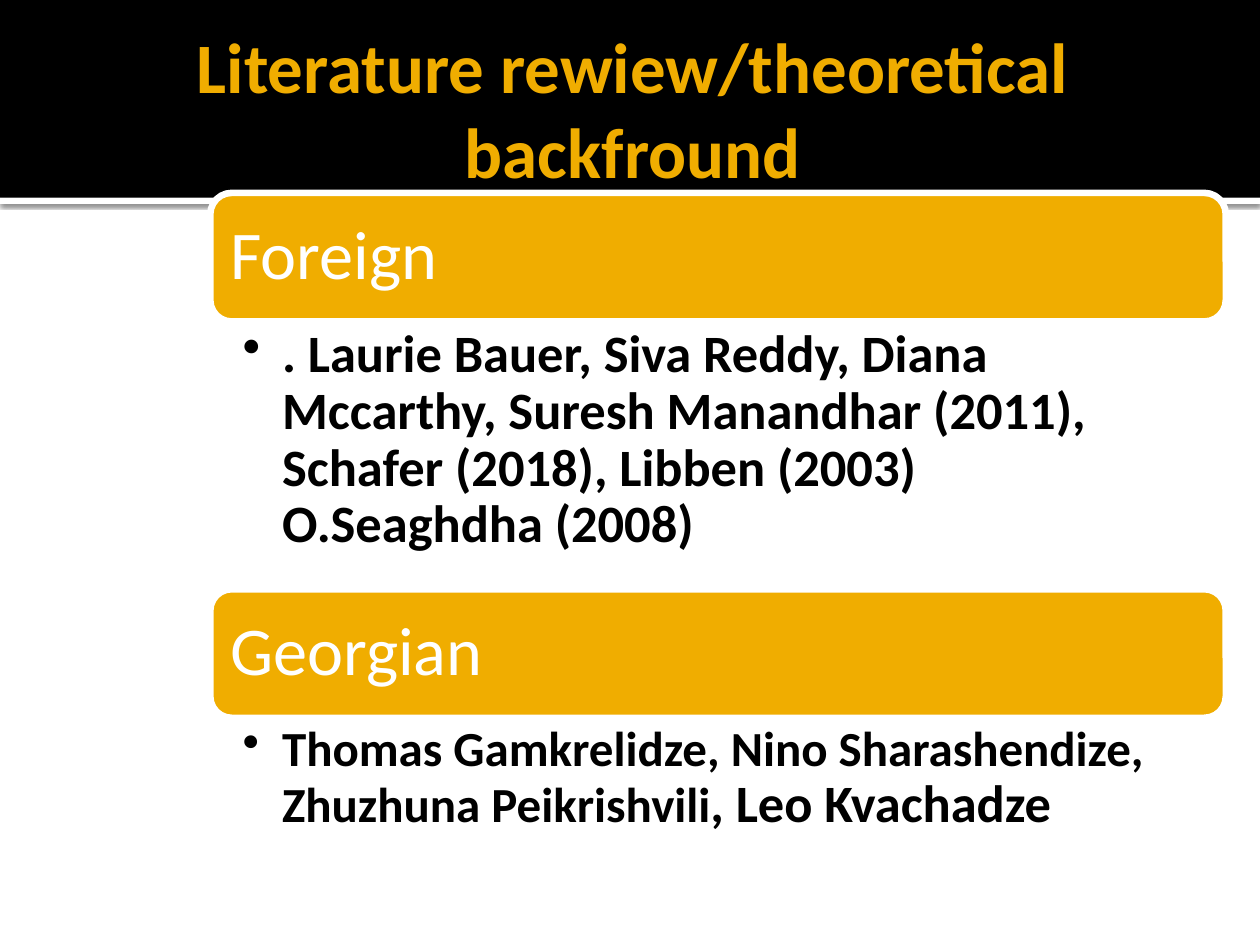
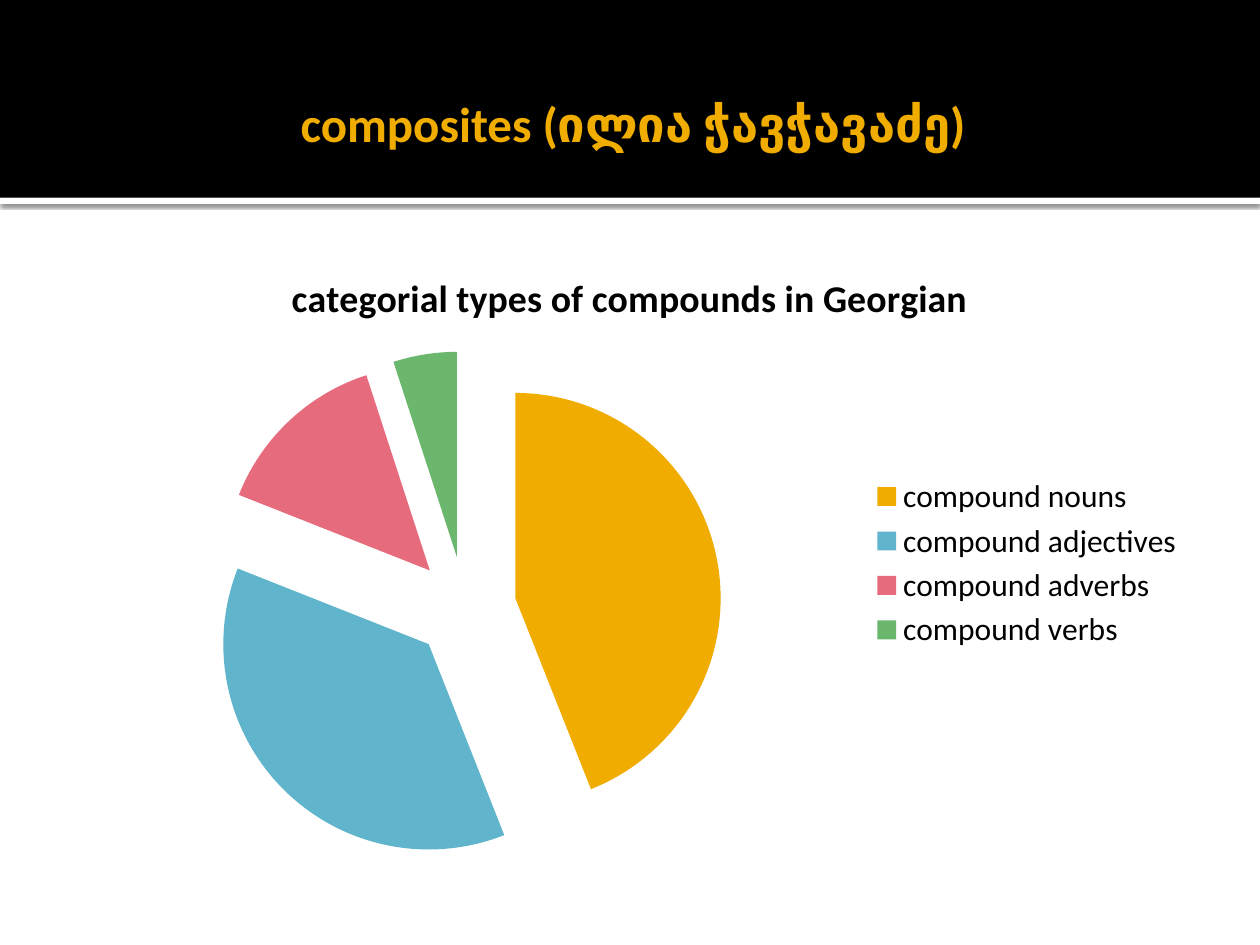
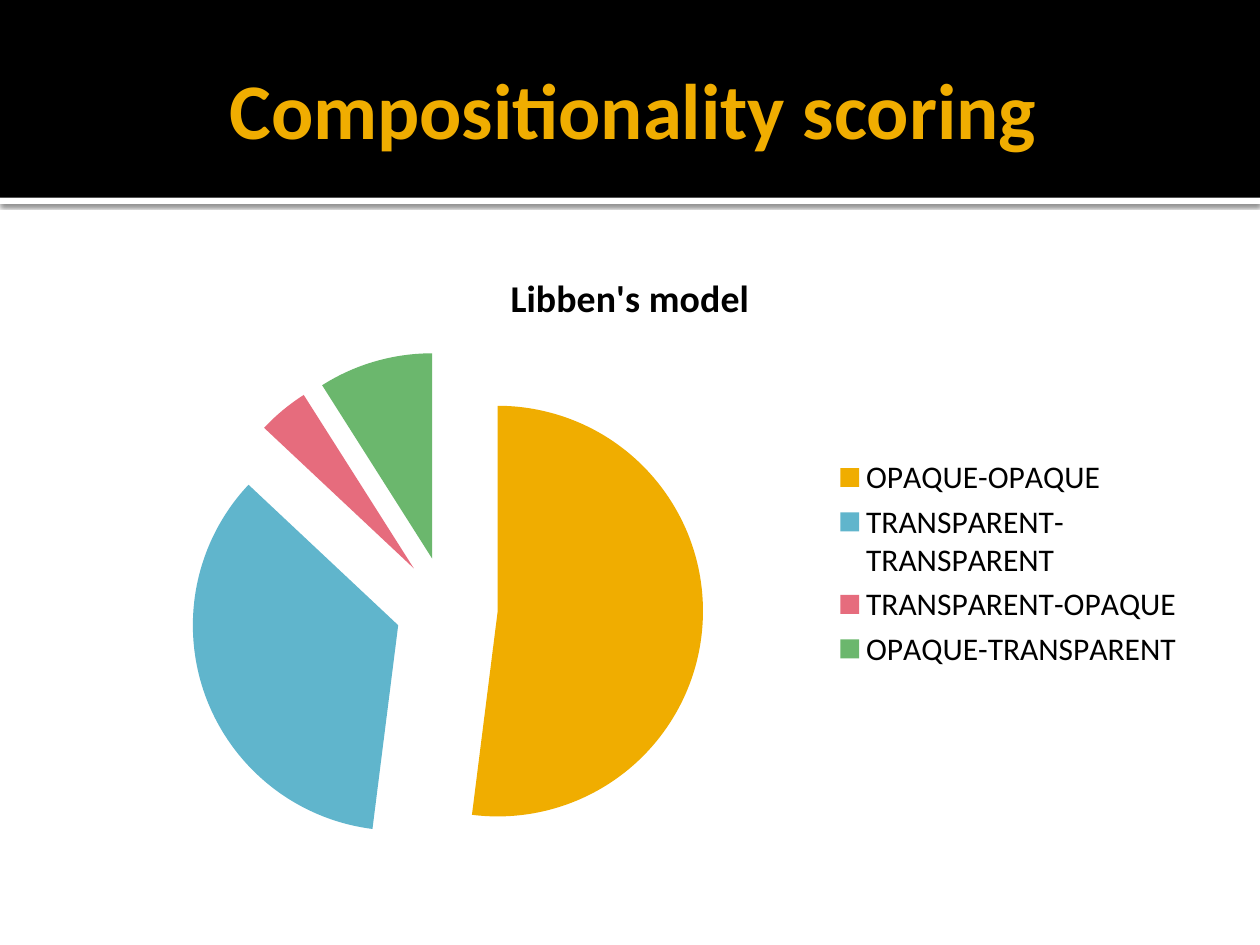
from dataclasses import dataclass
from typing import Any

from lxml import etree
from pptx import Presentation
from pptx.chart.data import CategoryChartData
from pptx.dml.color import RGBColor
from pptx.enum.chart import XL_CHART_TYPE, XL_LEGEND_POSITION
from pptx.enum.shapes import MSO_SHAPE
from pptx.enum.text import MSO_ANCHOR, PP_ALIGN
from pptx.oxml.ns import qn
from pptx.util import Pt

RECT = MSO_SHAPE.RECTANGLE
ROUNDED = MSO_SHAPE.ROUNDED_RECTANGLE
PIE = XL_CHART_TYPE.PIE_EXPLODED
LEGEND_RIGHT = XL_LEGEND_POSITION.RIGHT
TOP, MIDDLE = MSO_ANCHOR.TOP, MSO_ANCHOR.MIDDLE
LEFT, CENTER = PP_ALIGN.LEFT, PP_ALIGN.CENTER


@dataclass(frozen=True)
class Theme:
    font: str = "Calibri"
    black: RGBColor = RGBColor(0x00, 0x00, 0x00)
    white: RGBColor = RGBColor(0xFF, 0xFF, 0xFF)
    gold: RGBColor = RGBColor(0xF0, 0xAD, 0x00)
    blue: RGBColor = RGBColor(0x60, 0xB5, 0xCC)
    rose: RGBColor = RGBColor(0xE6, 0x6C, 0x7D)
    green: RGBColor = RGBColor(0x6B, 0xB7, 0x6D)
    heading_size: float = 39
    authors_size: float = 30
    authors_small_size: float = 28
    chart_size: float = 18
    chart_title_size: float = 21.6


THEME = Theme()
SLICE_COLORS = (THEME.gold, THEME.blue, THEME.rose, THEME.green)


@dataclass(frozen=True)
class Box:
    left: float
    top: float
    width: float
    height: float

    def emu(self) -> tuple[int, ...]:
        return tuple(Pt(v) for v in (self.left, self.top, self.width, self.height))


@dataclass(frozen=True)
class Title:
    text: str
    size: float
    height: float = 98.6


@dataclass(frozen=True)
class Section:
    """A heading bar with its list of authors as (text, size) runs."""
    heading: str
    authors: tuple[tuple[str, float], ...]
    body_height: float
    right_inset: float


@dataclass(frozen=True)
class PieChart:
    title: str
    shares: dict[str, int]


BAND = Box(0, 0, 720, 113)
BAND_EDGE = Box(0, 113, 720, 3.6)
CHART_BOX = Box(36, 139.7, 648, 364.3)
SECTIONS_LEFT, SECTIONS_TOP, SECTIONS_WIDTH = 120.2, 110.2, 580.3
BAR_HEIGHT = 73.5
BULLET_INDENT = 22.5

LITERATURE = (
    Section(
        "Foreign",
        ((". Laurie Bauer, Siva Reddy, Diana Mccarthy, Suresh Manandhar (2011), "
          "Schafer (2018), Libben (2003) O.Seaghdha (2008)", THEME.authors_size),),
        body_height=153, right_inset=21.3),
    Section(
        "Georgian",
        (("Thomas Gamkrelidze, Nino Sharashendize, Zhuzhuna Peikrishvili",
          THEME.authors_small_size),
         (", Leo Kvachadze", THEME.authors_size)),
        body_height=75, right_inset=16),
)
CHART_SLIDES = (
    (Title("composites (ილია ჭავჭავაძე)", 28, height=116),
     PieChart("categorial types of compounds in Georgian",
              {"compound nouns": 44, "compound adjectives": 37,
               "compound adverbs": 14, "compound verbs": 5})),
    (Title("Compositionality scoring", 45),
     PieChart("Libben's model",
              {"OPAQUE-OPAQUE": 52, "TRANSPARENT-TRANSPARENT": 35,
               "TRANSPARENT-OPAQUE": 4, "OPAQUE-TRANSPARENT": 9})),
)


def apply(target: Any, values: dict[str, Any]) -> None:
    for attribute, value in values.items():
        setattr(target, attribute, value)


def style_font(font: Any, size: float, color: RGBColor, bold: bool = False) -> None:
    apply(font, {"name": THEME.font, "size": Pt(size), "bold": bold})
    font.color.rgb = color


def prepare_frame(frame: Any, insets: tuple[float, ...], anchor: Any, align: Any) -> Any:
    """Set the frame's insets (left, top, right, bottom); return its paragraph."""
    left, top, right, bottom = (Pt(inset) for inset in insets)
    apply(frame, {"word_wrap": True, "vertical_anchor": anchor,
                  "margin_left": left, "margin_top": top,
                  "margin_right": right, "margin_bottom": bottom})
    paragraph = frame.paragraphs[0]
    paragraph.alignment = align
    return paragraph


def add_run(paragraph: Any, text: str, size: float, color: RGBColor,
            bold: bool = False) -> None:
    run = paragraph.add_run()
    run.text = text
    style_font(run.font, size, color, bold)


def add_block(slide: Any, kind: Any, box: Box, fill: RGBColor) -> Any:
    block = slide.shapes.add_shape(kind, *box.emu())
    block.shadow.inherit = False
    block.fill.solid()
    block.fill.fore_color.rgb = fill
    block.line.fill.background()
    return block


def add_drop_shadow(block: Any) -> None:
    effects = block._element.spPr.find(qn("a:effectLst"))
    shadow = etree.SubElement(effects, qn("a:outerShdw"), blurRad=str(Pt(2.5)),
                              dist=str(Pt(0.8)), dir="5400000", rotWithShape="0")
    color = etree.SubElement(shadow, qn("a:srgbClr"), val=str(THEME.black))
    etree.SubElement(color, qn("a:alpha"), val="60000")


def add_bullet(paragraph: Any) -> None:
    properties = paragraph._p.get_or_add_pPr()
    properties.set("marL", str(Pt(BULLET_INDENT)))
    properties.set("indent", str(-Pt(BULLET_INDENT)))
    etree.SubElement(properties, qn("a:buChar"), char="•")


def add_titled_slide(deck: Any, title: Title) -> Any:
    slide = deck.slides.add_slide(deck.slide_layouts[6])
    add_drop_shadow(add_block(slide, RECT, BAND_EDGE, THEME.white))
    add_block(slide, RECT, BAND, THEME.black)
    heading = slide.shapes.add_textbox(*Box(36, 12.2, 648, title.height).emu())
    paragraph = prepare_frame(heading.text_frame, (7.2, 3.6, 3.6, 3.6), MIDDLE, CENTER)
    add_run(paragraph, title.text, title.size, THEME.gold, bold=True)
    return slide


def add_section(slide: Any, section: Section, top: float) -> float:
    """Draw the section and return the top of the next one."""
    bar = add_block(slide, ROUNDED, Box(SECTIONS_LEFT, top, SECTIONS_WIDTH, BAR_HEIGHT),
                    THEME.gold)
    bar.line.color.rgb = THEME.white
    bar.line.width = Pt(3.78)
    heading = prepare_frame(bar.text_frame, (8, 8, 8, 8), MIDDLE, LEFT)
    heading.line_spacing = 0.9
    add_run(heading, section.heading, THEME.heading_size, THEME.white)

    body_top = top + BAR_HEIGHT
    body = slide.shapes.add_textbox(
        *Box(SECTIONS_LEFT, body_top, SECTIONS_WIDTH, section.body_height).emu())
    authors = prepare_frame(body.text_frame, (18.5, 3.5, section.right_inset, 3.5), TOP, LEFT)
    authors.line_spacing = 0.9
    add_bullet(authors)
    for text, size in section.authors:
        add_run(authors, text, size, THEME.black, bold=True)
    return body_top + section.body_height


def add_pie(slide: Any, pie: PieChart) -> None:
    data = CategoryChartData()
    data.categories = list(pie.shares)
    data.add_series(pie.title, list(pie.shares.values()))
    chart = slide.shapes.add_chart(PIE, *CHART_BOX.emu(), data).chart
    style_font(chart.font, THEME.chart_size, THEME.black)

    apply(chart, {"has_title": True, "has_legend": True})
    add_run(chart.chart_title.text_frame.paragraphs[0], pie.title,
            THEME.chart_title_size, THEME.black, bold=True)
    apply(chart.legend, {"position": LEGEND_RIGHT, "include_in_layout": False})
    style_font(chart.legend.font, THEME.chart_size, THEME.black)

    plot = chart.plots[0]
    plot.vary_by_categories = True
    for index, color in enumerate(SLICE_COLORS):
        fill = plot.series[0].points[index].format.fill
        fill.solid()
        fill.fore_color.rgb = color


def main() -> None:
    deck = Presentation()
    apply(deck, {"slide_width": Pt(720), "slide_height": Pt(540)})

    literature = add_titled_slide(
        deck, Title("Literature rewiew/theoretical backfround", 40.5))
    top = SECTIONS_TOP
    for section in LITERATURE:
        top = add_section(literature, section, top)

    for title, pie in CHART_SLIDES:
        add_pie(add_titled_slide(deck, title), pie)
    deck.save("out.pptx")


if __name__ == "__main__":
    main()
